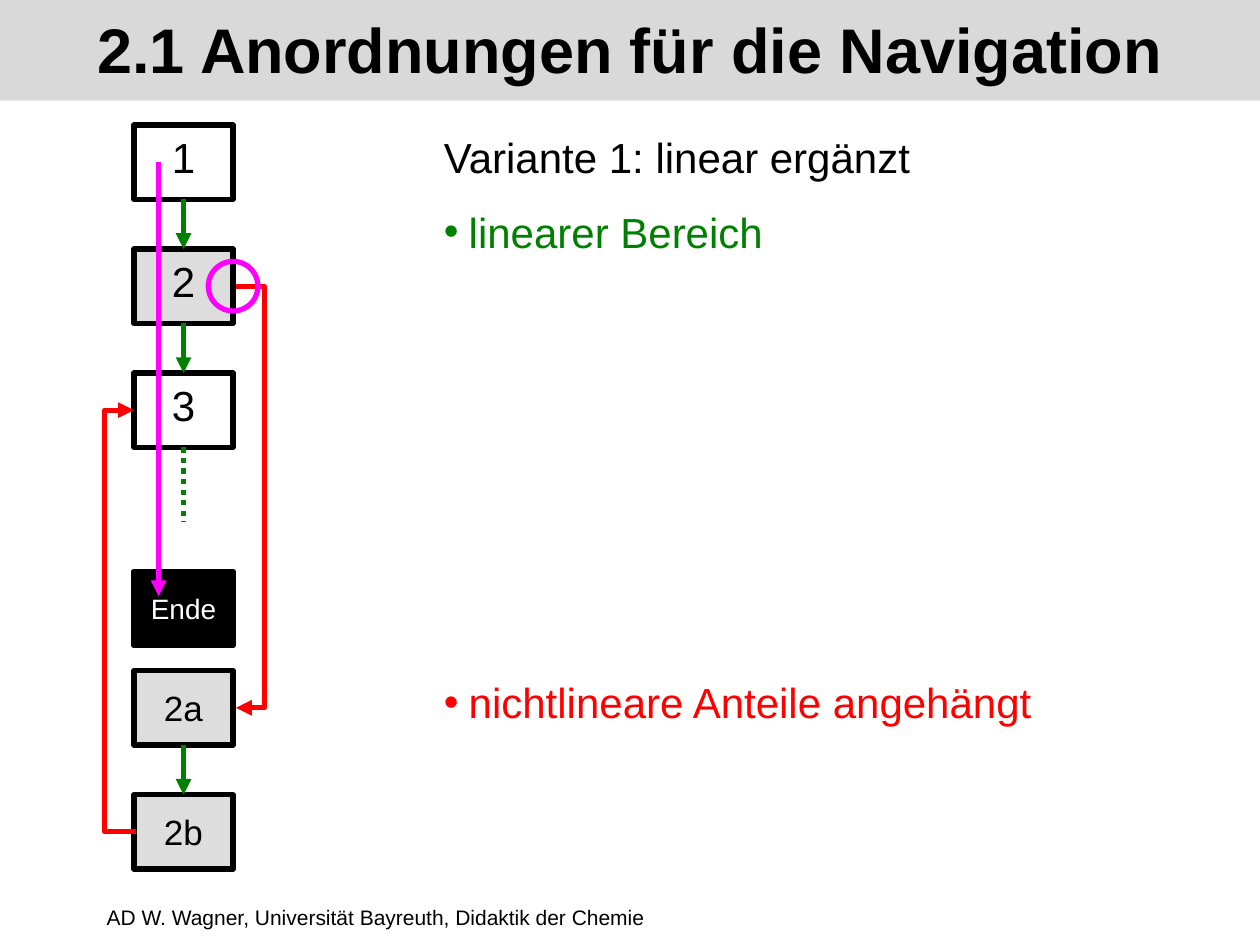
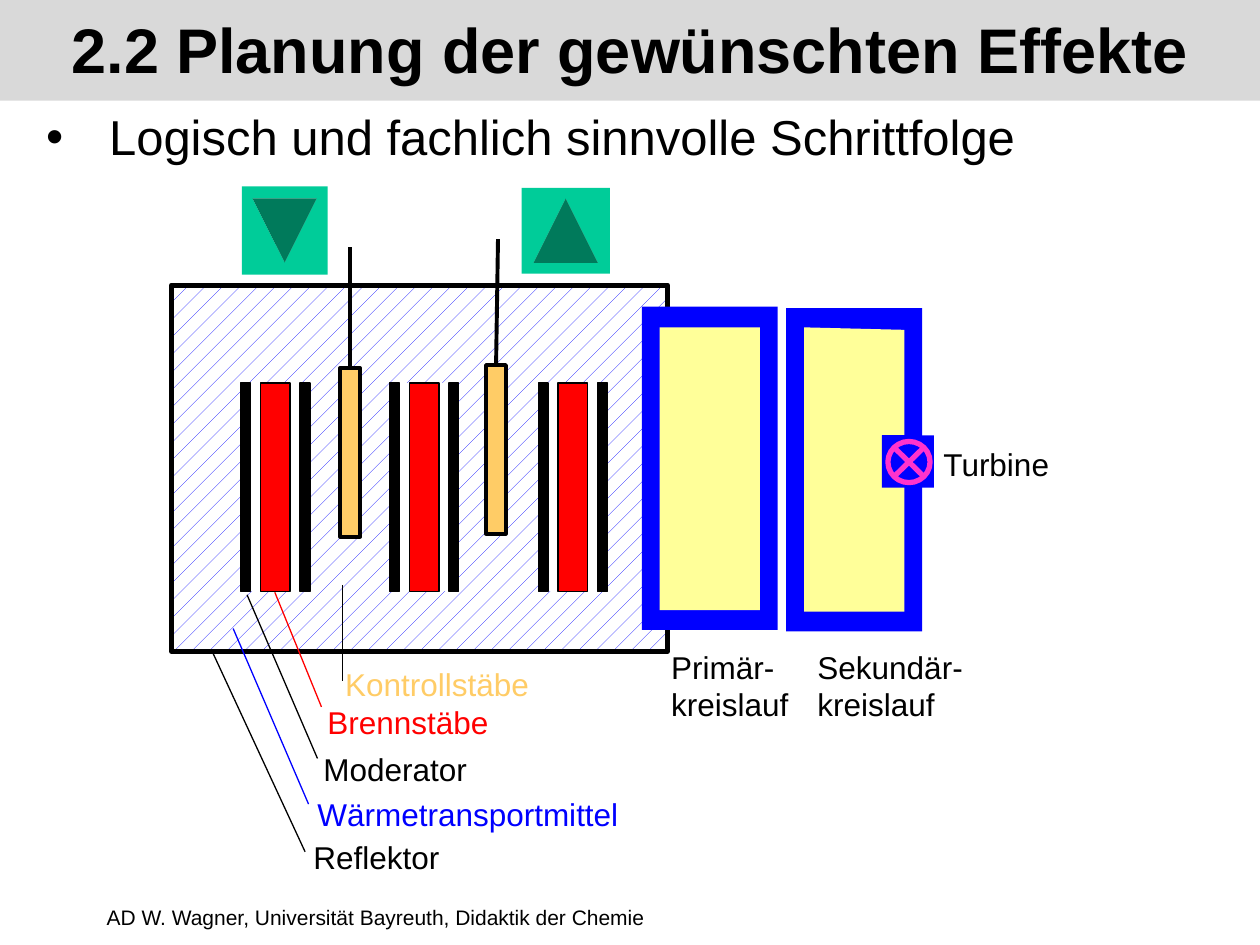
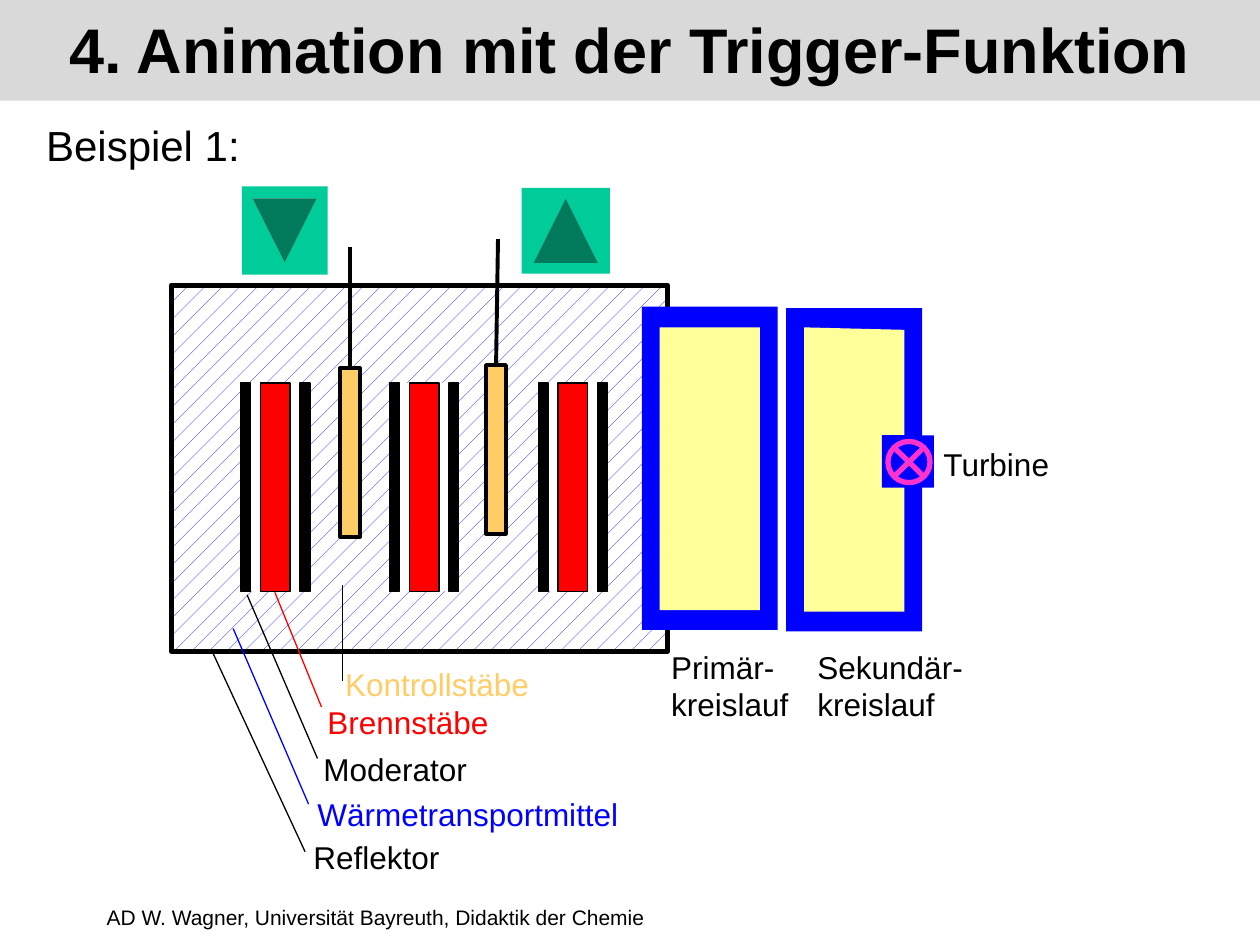
from dataclasses import dataclass
from typing import NamedTuple, Optional

from lxml.etree import SubElement
from pptx import Presentation
from pptx.dml.color import RGBColor
from pptx.enum.dml import MSO_LINE, MSO_PATTERN
from pptx.enum.shapes import MSO_CONNECTOR, MSO_SHAPE
from pptx.enum.text import MSO_ANCHOR, PP_ALIGN
from pptx.oxml.ns import qn
from pptx.util import Cm, Pt


@dataclass(frozen=True)
class Theme:
    font: str = "Arial"
    black: RGBColor = RGBColor(0, 0, 0)
    white: RGBColor = RGBColor(255, 255, 255)
    band: RGBColor = RGBColor(0xD9, 0xD9, 0xD9)
    grey: RGBColor = RGBColor(0xDD, 0xDD, 0xDD)
    green: RGBColor = RGBColor(0, 0x80, 0)
    red: RGBColor = RGBColor(255, 0, 0)
    magenta: RGBColor = RGBColor(255, 0, 255)
    blue: RGBColor = RGBColor(0, 0, 255)
    orange: RGBColor = RGBColor(0xFF, 0xCC, 0x66)
    yellow: RGBColor = RGBColor(0xFF, 0xFF, 0x99)
    teal: RGBColor = RGBColor(0, 0xCC, 0x99)
    pink: RGBColor = RGBColor(0xFF, 0x33, 0xCC)
    title_size: float = 36
    body_size: float = 28
    text_size: float = 24
    detail_size: float = 20
    label_size: float = 18
    end_size: float = 16
    footer_size: float = 12
    thick: float = 3
    medium: float = 2.25
    thin: float = 0.75


THEME = Theme()
FOOTER = "AD W. Wagner, Universität Bayreuth, Didaktik der Chemie"


class Area(NamedTuple):
    left: float
    top: float
    width: float
    height: float


class Point(NamedTuple):
    x: float
    y: float


class Stroke(NamedTuple):
    color: RGBColor
    width: float
    arrow: bool = False
    dash: Optional[MSO_LINE] = None


@dataclass(frozen=True)
class TextStyle:
    size: float
    color: RGBColor = THEME.black
    bold: bool = False
    align: PP_ALIGN = PP_ALIGN.LEFT
    anchor: MSO_ANCHOR = MSO_ANCHOR.TOP
    wrap: bool = True
    bullet_indent: float = 0


class Station(NamedTuple):
    name: str
    step: float
    size: float
    fill: Optional[RGBColor] = None
    color: RGBColor = THEME.black
    anchor: MSO_ANCHOR = MSO_ANCHOR.MIDDLE


class Label(NamedTuple):
    text: str
    area: Area
    color: RGBColor = THEME.black


class Leader(NamedTuple):
    begin: Point
    end: Point
    color: RGBColor = THEME.black


OUTLINE = Stroke(THEME.black, THEME.thick)
ROD_OUTLINE = Stroke(THEME.black, THEME.medium)
THIN_OUTLINE = Stroke(THEME.black, THEME.thin)
STEP_ARROW = Stroke(THEME.green, THEME.thick, arrow=True)
JUMP_ARROW = Stroke(THEME.red, THEME.thick, arrow=True)

STATIONS = [
    Station("1", 0, THEME.text_size, anchor=MSO_ANCHOR.TOP),
    Station("2", 1, THEME.text_size, THEME.grey, anchor=MSO_ANCHOR.TOP),
    Station("3", 2, THEME.text_size, anchor=MSO_ANCHOR.TOP),
    Station("Ende", 3.6, THEME.end_size, THEME.black, THEME.white),
    Station("2a", 4.4, THEME.detail_size, THEME.grey),
    Station("2b", 5.4, THEME.detail_size, THEME.grey),
]
STATION_AREA = Area(2.7, 2.52, 2, 1.5)
STATION_PITCH = 2.5

REACTOR_LABELS = [
    Label("Reflektor", Area(6.07, 16.76, 3.05, 1.02)),
    Label("Turbine", Area(18.77, 8.84, 2.67, 1.02)),
    Label("Sekundär-\nkreislauf", Area(16.23, 12.93, 3.43, 1.78)),
    Label("Primär-\nkreislauf", Area(13.28, 12.93, 2.87, 1.78)),
    Label("Kontrollstäbe", Area(6.71, 13.28, 4.22, 1.02), THEME.orange),
    Label("Wärmetransportmittel", Area(6.15, 15.9, 6.58, 1.02), THEME.blue),
    Label("Moderator", Area(6.27, 14.99, 3.4, 1.02)),
    Label("Brennstäbe", Area(6.35, 14.05, 3.76, 1.02), THEME.red),
]
LEADERS = [
    Leader(Point(5.54, 11.94), Point(6.48, 14.25), THEME.red),
    Leader(Point(4.98, 11.99), Point(6.4, 15.29)),
    Leader(Point(4.7, 12.67), Point(6.22, 16.21), THEME.blue),
    Leader(Point(4.29, 13.16), Point(6.15, 17.17)),
    Leader(Point(6.91, 11.79), Point(6.91, 13.72)),
]
SECONDARY_INSIDE = [
    Point(16.21, 6.6), Point(18.23, 6.65), Point(18.23, 8.77), Point(17.78, 8.77),
    Point(17.78, 9.72), Point(18.23, 9.7), Point(18.23, 12.33), Point(16.21, 12.33),
]


def write(shape, text: str, style: TextStyle) -> None:
    frame = shape.text_frame
    frame.word_wrap = style.wrap
    frame.vertical_anchor = style.anchor
    frame.text = text
    for para in frame.paragraphs:
        para.alignment = style.align
        if style.bullet_indent:
            properties = para._p.get_or_add_pPr()
            indent = Cm(style.bullet_indent)
            properties.set("marL", str(indent))
            properties.set("indent", str(-indent))
            SubElement(properties, qn("a:buFont"), typeface=THEME.font)
            SubElement(properties, qn("a:buChar"), char="•")
        para.font.name = THEME.font
        para.font.size = Pt(style.size)
        para.font.bold = style.bold
        para.font.color.rgb = style.color


def paint(shape, fill: Optional[RGBColor], stroke: Optional[Stroke]) -> None:
    shape.shadow.inherit = False
    if fill is None:
        shape.fill.background()
    else:
        shape.fill.solid()
        shape.fill.fore_color.rgb = fill
    if stroke is None:
        shape.line.fill.background()
    else:
        shape.line.color.rgb = stroke.color
        shape.line.width = Pt(stroke.width)


def add_block(shapes, area: Area, fill: Optional[RGBColor] = None,
              stroke: Optional[Stroke] = None, kind: MSO_SHAPE = MSO_SHAPE.RECTANGLE):
    block = shapes.add_shape(kind, *(Cm(length) for length in area))
    paint(block, fill, stroke)
    return block


def add_text(page, text: str, area: Area, style: TextStyle) -> None:
    box = page.shapes.add_textbox(*(Cm(length) for length in area))
    write(box, text, style)


def add_line(shapes, begin: Point, end: Point, stroke: Stroke,
             kind: MSO_CONNECTOR = MSO_CONNECTOR.STRAIGHT):
    line = shapes.add_connector(kind, *(Cm(length) for length in (*begin, *end)))
    line.line.color.rgb = stroke.color
    line.line.width = Pt(stroke.width)
    if stroke.dash is not None:
        line.line.dash_style = stroke.dash
    properties = line.element.spPr
    if stroke.arrow:
        SubElement(properties.find(qn("a:ln")), qn("a:tailEnd"), type="triangle")
    SubElement(properties, qn("a:effectLst"))
    return line


def add_detour(page, begin: Point, end: Point, via_x: float) -> None:
    line = add_line(page.shapes, begin, end, JUMP_ARROW, MSO_CONNECTOR.ELBOW)
    ratio = (via_x - begin.x) / (end.x - begin.x)
    geometry = line.element.spPr.find(qn("a:prstGeom"))
    adjustments = geometry.find(qn("a:avLst"))
    if adjustments is None:
        adjustments = SubElement(geometry, qn("a:avLst"))
    SubElement(adjustments, qn("a:gd"), name="adj1", fmla=f"val {round(ratio * 100000)}")


def add_page(deck, title: str):
    page = deck.slides.add_slide(deck.slide_layouts[6])
    add_text(page, FOOTER, Area(1.9, 17.86, 21.6, 1.27),
             TextStyle(THEME.footer_size, anchor=MSO_ANCHOR.MIDDLE))
    band = add_block(page.shapes, Area(0, -0.08, 25.4, 2.11), THEME.band)
    write(band, title, TextStyle(THEME.title_size, bold=True, align=PP_ALIGN.CENTER,
                                 anchor=MSO_ANCHOR.MIDDLE))
    return page


def add_station(page, station: Station):
    top = STATION_AREA.top + station.step * STATION_PITCH
    block = add_block(page.shapes, STATION_AREA._replace(top=top), station.fill, OUTLINE)
    write(block, station.name, TextStyle(station.size, station.color,
                                         align=PP_ALIGN.CENTER, anchor=station.anchor))
    return block


def draw_navigation(page) -> None:
    blocks = {station.name: add_station(page, station) for station in STATIONS}
    middle = STATION_AREA.left + STATION_AREA.width / 2
    centers = {station.name: STATION_AREA.top + station.step * STATION_PITCH
               + STATION_AREA.height / 2 for station in STATIONS}

    dotted = add_line(page.shapes, Point(middle, 9.02), Point(middle, 10.52),
                      Stroke(THEME.green, THEME.thick, dash=MSO_LINE.ROUND_DOT))
    dotted.begin_connect(blocks["3"], 2)
    for source, target in (("1", "2"), ("2", "3"), ("2a", "2b")):
        arrow = add_line(page.shapes, Point(middle, centers[source]),
                         Point(middle, centers[target]), STEP_ARROW)
        arrow.begin_connect(blocks[source], 2)
        arrow.end_connect(blocks[target], 0)
    add_detour(page, Point(4.75, centers["2"]), Point(4.76, centers["2a"]), 5.33)
    add_detour(page, Point(2.74, centers["2b"]), Point(2.7, centers["3"]), 2.11)

    add_text(page, "Variante 1: linear ergänzt", Area(8.7, 2.52, 12, 1.27),
             TextStyle(THEME.text_size))
    for text, top, color in (("linearer Bereich", 4.03, THEME.green),
                             ("nichtlineare Anteile angehängt", 13.52, THEME.red)):
        add_text(page, text, Area(8.7, top, 16, 1.27),
                 TextStyle(THEME.text_size, color, bullet_indent=0.5))

    add_block(page.shapes, Area(4.2, 5.27, 1, 1), None,
              Stroke(THEME.magenta, THEME.thick), MSO_SHAPE.OVAL)
    add_line(page.shapes, Point(3.2, centers["1"]), Point(3.2, 12.02),
             Stroke(THEME.magenta, THEME.thick, arrow=True))


def add_fuel_element(page, left: float) -> None:
    shapes = page.shapes.add_group_shape().shapes
    element = Area(left, 7.72, 1.4, 4.2)
    add_block(shapes, element, THEME.white)
    for offset, width, color in ((0.4, 0.6, THEME.red), (1.2, 0.2, THEME.black),
                                 (0, 0.2, THEME.black)):
        add_block(shapes, element._replace(left=left + offset, width=width),
                  color, THIN_OUTLINE)


def add_control_rod(page, left: float, top: float, cable_end: Point) -> None:
    shapes = page.shapes.add_group_shape().shapes
    rod = Area(left, top, 0.4, 3.4)
    block = add_block(shapes, rod, THEME.orange, ROD_OUTLINE)
    cable = add_line(shapes, Point(left + rod.width / 2, top), cable_end, ROD_OUTLINE)
    cable.begin_connect(block, 0)


def draw_reactor(page) -> None:
    shapes = page.shapes
    vessel = add_block(shapes, Area(3.46, 5.75, 10, 7.38), THEME.white, OUTLINE)
    vessel.fill.patterned()
    vessel.fill.pattern = MSO_PATTERN.PERCENT_5
    vessel.fill.fore_color.rgb = THEME.blue
    vessel.fill.back_color.rgb = THEME.white

    circuit = Area(12.94, 6.18, 2.74, 6.52)
    add_block(shapes, circuit, THEME.blue)
    for index in range(3):
        add_fuel_element(page, 4.85 + 3 * index)
    add_control_rod(page, 6.86, 7.42, Point(7.06, 4.98))
    add_control_rod(page, 9.8, 7.36, Point(10.04, 4.82))
    for label in REACTOR_LABELS:
        add_text(page, label.text, label.area,
                 TextStyle(THEME.label_size, label.color, wrap=False))

    for kind, area in (
        (MSO_SHAPE.ACTION_BUTTON_FORWARD_OR_NEXT, Area(10.54, 3.76, 1.73, 1.78)),
        (MSO_SHAPE.ACTION_BUTTON_BACK_OR_PREVIOUS, Area(4.85, 3.78, 1.78, 1.73)),
    ):
        button = add_block(shapes, area, THEME.teal, kind=kind)
        button.rotation = 270

    add_block(shapes, circuit._replace(left=15.85, top=6.21), THEME.blue)
    add_block(shapes, Area(13.3, 6.6, 2.02, 5.7), THEME.yellow)
    start, *corners = [(Cm(point.x), Cm(point.y)) for point in SECONDARY_INSIDE]
    builder = shapes.build_freeform(*start)
    builder.add_line_segments(corners, close=True)
    paint(builder.convert_to_shape(), THEME.yellow, None)

    add_block(shapes, Area(17.78, 8.78, 1.05, 1.05), THEME.blue)
    add_block(shapes, Area(17.9, 8.9, 0.85, 0.83), None,
              Stroke(THEME.pink, THEME.thick), MSO_SHAPE.FLOWCHART_SUMMING_JUNCTION)
    for leader in LEADERS:
        add_line(shapes, leader.begin, leader.end, Stroke(leader.color, THEME.thin))


def main() -> None:
    deck = Presentation()
    deck.slide_width, deck.slide_height = Cm(25.4), Cm(19.05)

    draw_navigation(add_page(deck, "2.1 Anordnungen für die Navigation"))

    planning = add_page(deck, "2.2 Planung der gewünschten Effekte")
    add_text(planning, "Logisch und fachlich sinnvolle Schrittfolge",
             Area(0.68, 2.03, 24, 1.73), TextStyle(THEME.body_size, bullet_indent=1.27))
    draw_reactor(planning)

    trigger = add_page(deck, "4. Animation mit der Trigger-Funktion")
    draw_reactor(trigger)
    add_text(trigger, "Beispiel 1:", Area(0.68, 2.29, 4.75, 1.27),
             TextStyle(THEME.text_size))

    deck.save("out.pptx")


if __name__ == "__main__":
    main()
